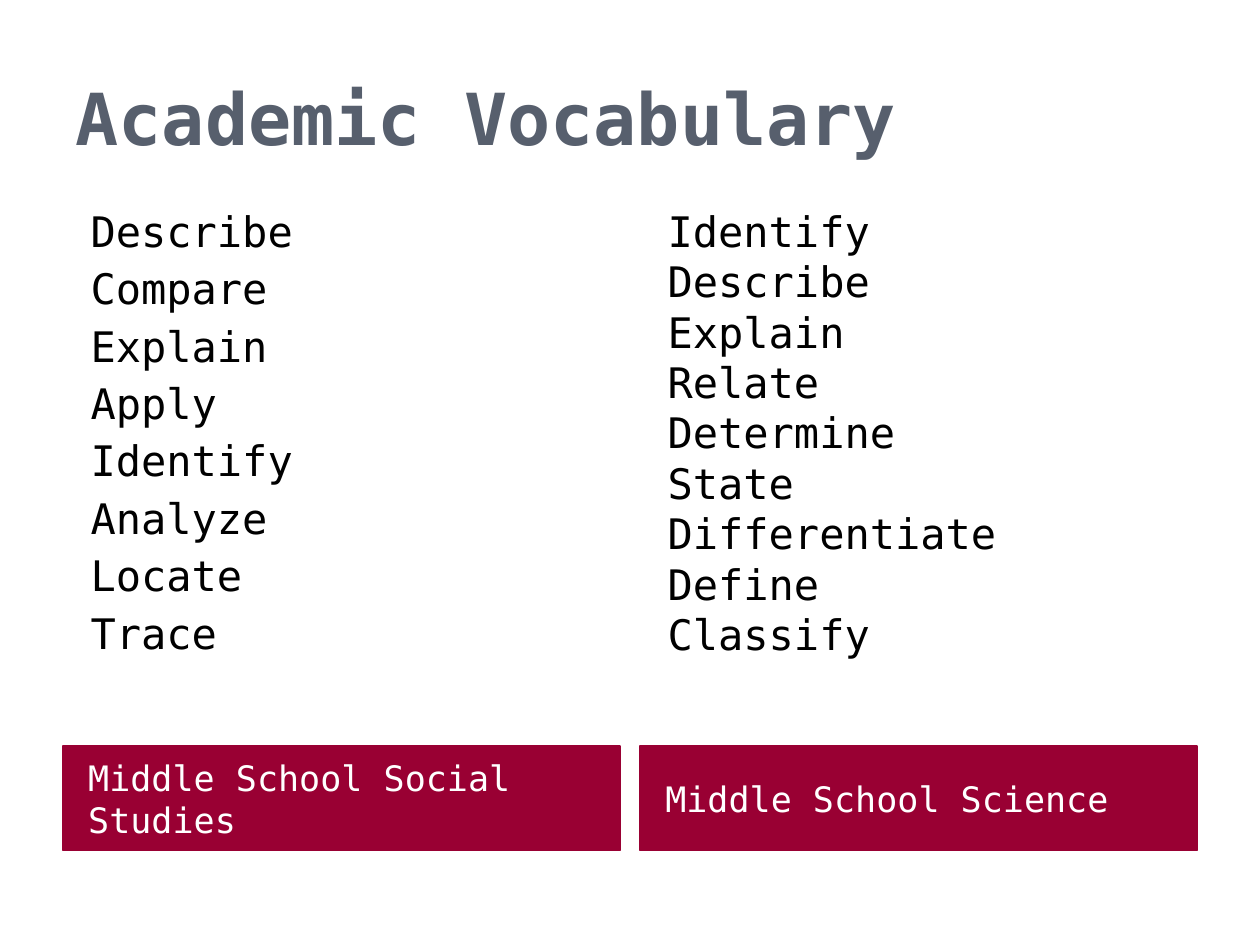
from pptx import Presentation
from pptx.dml.color import RGBColor
from pptx.enum.shapes import MSO_SHAPE
from pptx.enum.text import MSO_ANCHOR, PP_ALIGN
from pptx.util import Inches, Pt

COLORS = {"title": "575F6D", "band": "990033", "band_text": "FFFFFF", "word": "000000"}
FONT = "DejaVu Sans Mono"
COLUMN_WIDTH = Inches(4.42)

# Subject, left edge, space before each word after the first, words
SUBJECTS = [
    ("Middle School Social Studies", 0.5, 4,
     ["Describe", "Compare", "Explain", "Apply", "Identify", "Analyze", "Locate", "Trace"]),
    ("Middle School Science", 5.08, 0,
     ["Identify", "Describe", "Explain", "Relate", "Determine", "State",
      "Differentiate", "Define", "Classify"]),
]


def style(paragraph, size, color, bold=False):
    paragraph.alignment = PP_ALIGN.LEFT
    paragraph.font.name = FONT
    paragraph.font.size = Pt(size)
    paragraph.font.bold = bold
    paragraph.font.color.rgb = RGBColor.from_string(COLORS[color])


prs = Presentation()
prs.slide_width, prs.slide_height = Inches(10), Inches(7.5)
slide = prs.slides.add_slide(prs.slide_layouts[5])

# Title
title = slide.shapes.title
title.left, title.top = Inches(0.5), Inches(0.3)
title.width, title.height = Inches(9), Inches(1.25)
title.text_frame.text = "Academic Vocabulary"
title.text_frame.vertical_anchor = MSO_ANCHOR.MIDDLE
style(title.text_frame.paragraphs[0], 41, "title", bold=True)

for subject, left, gap, words in SUBJECTS:
    # Subject band
    band = slide.shapes.add_shape(
        MSO_SHAPE.RECTANGLE, Inches(left), Inches(5.92), COLUMN_WIDTH, Inches(0.83))
    band.shadow.inherit = False
    band.fill.solid()
    band.fill.fore_color.rgb = RGBColor.from_string(COLORS["band"])
    band.line.color.rgb = RGBColor.from_string(COLORS["band"])
    band.line.width = Pt(0.75)
    band_frame = band.text_frame
    band_frame.text = subject
    band_frame.word_wrap = True
    band_frame.vertical_anchor = MSO_ANCHOR.MIDDLE
    band_frame.margin_left = Inches(0.2)
    band_frame.paragraphs[0].line_spacing = Pt(24)
    style(band_frame.paragraphs[0], 20, "band_text")

    # Word list
    word_frame = slide.shapes.add_textbox(
        Inches(left), Inches(1.58), COLUMN_WIDTH, Inches(4.31)).text_frame
    word_frame.word_wrap = True
    word_frame.text = "\n".join(words)
    for i, word in enumerate(word_frame.paragraphs):
        indents = word._p.get_or_add_pPr()
        indents.set("marL", str(Inches(0.4)))
        indents.set("indent", str(Inches(-0.28)))
        word.line_spacing = Pt(28.8)
        word.space_before = Pt(gap if i else 0)
        style(word, 24, "word")

prs.save("out.pptx")
